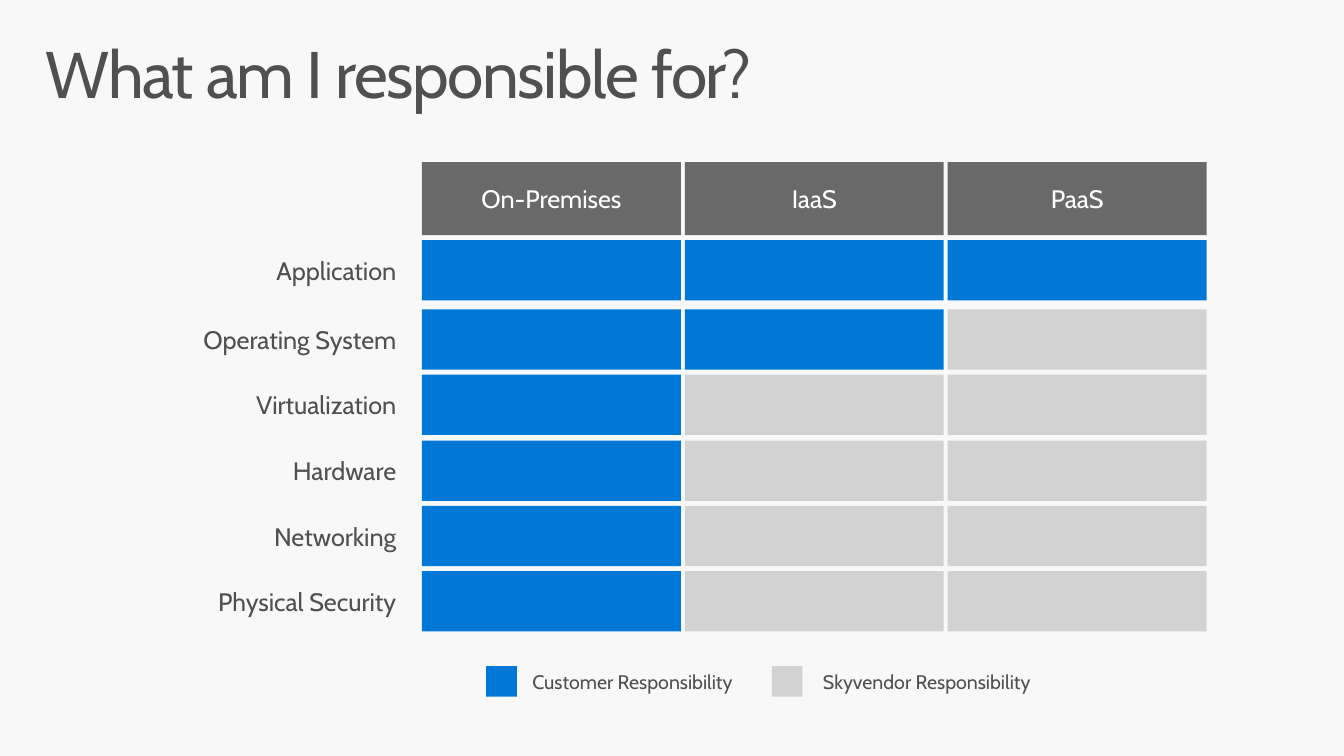
from lxml import etree
from pptx import Presentation
from pptx.dml.color import RGBColor
from pptx.enum.shapes import MSO_SHAPE
from pptx.enum.text import MSO_ANCHOR, MSO_AUTO_SIZE, PP_ALIGN
from pptx.oxml.ns import qn
from pptx.util import Pt

RECTANGLE = MSO_SHAPE.RECTANGLE
TOP, MIDDLE = MSO_ANCHOR.TOP, MSO_ANCHOR.MIDDLE
LEFT, CENTER, RIGHT = PP_ALIGN.LEFT, PP_ALIGN.CENTER, PP_ALIGN.RIGHT
NO_AUTOFIT = MSO_AUTO_SIZE.NONE

EMU_PER_PX = 9144
FONT = "Cabin"
COLORS = {
    "background": "F8F8F8",
    "text": "505050",
    "header": "505050",
    "header_text": "FFFFFF",
    "customer": "0078D7",
    "provider": "D2D2D2",
}
HEADER_ALPHA = 85

MODELS = ["On-Premises", "IaaS", "PaaS"]
CUSTOMER_MODELS = {
    "Application": 3,
    "Operating System": 2,
    "Virtualization": 1,
    "Hardware": 1,
    "Networking": 1,
    "Physical Security": 1,
}
LEGEND = [
    ("Customer Responsibility", "customer", 0, 37),
    ("Skyvendor Responsibility", "provider", 289, 42),
]


def px(*lengths):
    return [length * EMU_PER_PX for length in lengths]


def color(name):
    return RGBColor.from_string(COLORS[name])


def write(shape, text, size, ink="text", align=LEFT, anchor=TOP, insets=(10, 5, 10, 5)):
    frame = shape.text_frame
    left, top, right, bottom = px(*insets)
    frame_format = {
        "word_wrap": True,
        "auto_size": NO_AUTOFIT,
        "vertical_anchor": anchor,
        "margin_left": left,
        "margin_top": top,
        "margin_right": right,
        "margin_bottom": bottom,
    }
    for attribute, value in frame_format.items():
        setattr(frame, attribute, value)
    paragraph = frame.paragraphs[0]
    paragraph.alignment = align
    run = paragraph.add_run()
    run.text = text
    for attribute, value in {"name": FONT, "size": Pt(size)}.items():
        setattr(run.font, attribute, value)
    run.font.color.rgb = color(ink)
    return paragraph


def add_block(slide, box, fill):
    block = slide.shapes.add_shape(RECTANGLE, *px(*box))
    block.shadow.inherit = False
    block.fill.solid()
    block.fill.fore_color.rgb = color(fill)
    block.line.fill.background()
    return block


def add_label(slide, box, text, size, **text_format):
    label = slide.shapes.add_textbox(*px(*box))
    write(label, text, size, **text_format)


def add_title(slide, box, text):
    title = slide.shapes.title
    for side, length in zip(("left", "top", "width", "height"), px(*box)):
        setattr(title, side, length)
    paragraph = write(title, text, 48, insets=(16, 10, 16, 10))
    paragraph.line_spacing = 0.9
    paragraph.runs[0].font._element.set("spc", "-100")


def add_header(slide, box, model):
    header = add_block(slide, box, "header")
    fill_color = header._element.spPr.find(qn("a:solidFill"))[0]
    etree.SubElement(fill_color, qn("a:alpha")).set("val", str(HEADER_ALPHA * 1000))
    write(header, model, 18.4, "header_text", CENTER, MIDDLE, (20, 0, 20, 0))


def add_matrix(slide, box):
    left, top, width, height = box
    label_width, header_height, cell_height = 261, 74, 61
    first_column, column_pitch, cell_width = left + 287, 266, 262
    first_row, second_row = top + 79, top + 149
    last_row = top + height - cell_height
    row_pitch = (last_row - second_row) / (len(CUSTOMER_MODELS) - 2)
    columns = [first_column + column_pitch * i for i in range(len(MODELS))]

    for x, model in zip(columns, MODELS):
        add_header(slide, (x, top, cell_width, header_height), model)
    for row, (layer, customer_count) in enumerate(CUSTOMER_MODELS.items()):
        y = round(second_row + row_pitch * (row - 1)) if row else first_row
        add_label(slide, (left, y, label_width, cell_height), layer, 18.4,
                  align=RIGHT, anchor=MIDDLE, insets=(0, 5, 0, 5))
        for column, x in enumerate(columns):
            owner = "customer" if column < customer_count else "provider"
            add_block(slide, (x, y, cell_width, cell_height), owner)


def add_legend(slide, box):
    left, top, width, height = box
    swatch = 31
    for text, owner, offset, text_offset in LEGEND:
        x = left + offset
        add_block(slide, (x, top + 1, swatch, swatch), owner)
        add_label(slide, (x + text_offset, top, 237, height), text, 14.3)


def main():
    deck = Presentation()
    deck.slide_width, deck.slide_height = px(1360, 765)
    slide = deck.slides.add_slide(deck.slide_layouts[5])
    slide.background.fill.solid()
    slide.background.fill.fore_color.rgb = color("background")
    add_title(slide, (30, 32, 1300, 100), "What am I responsible for?")
    add_matrix(slide, (140, 164, 1081, 475))
    add_legend(slide, (492, 673, 567, 35))
    deck.save("out.pptx")


if __name__ == "__main__":
    main()
